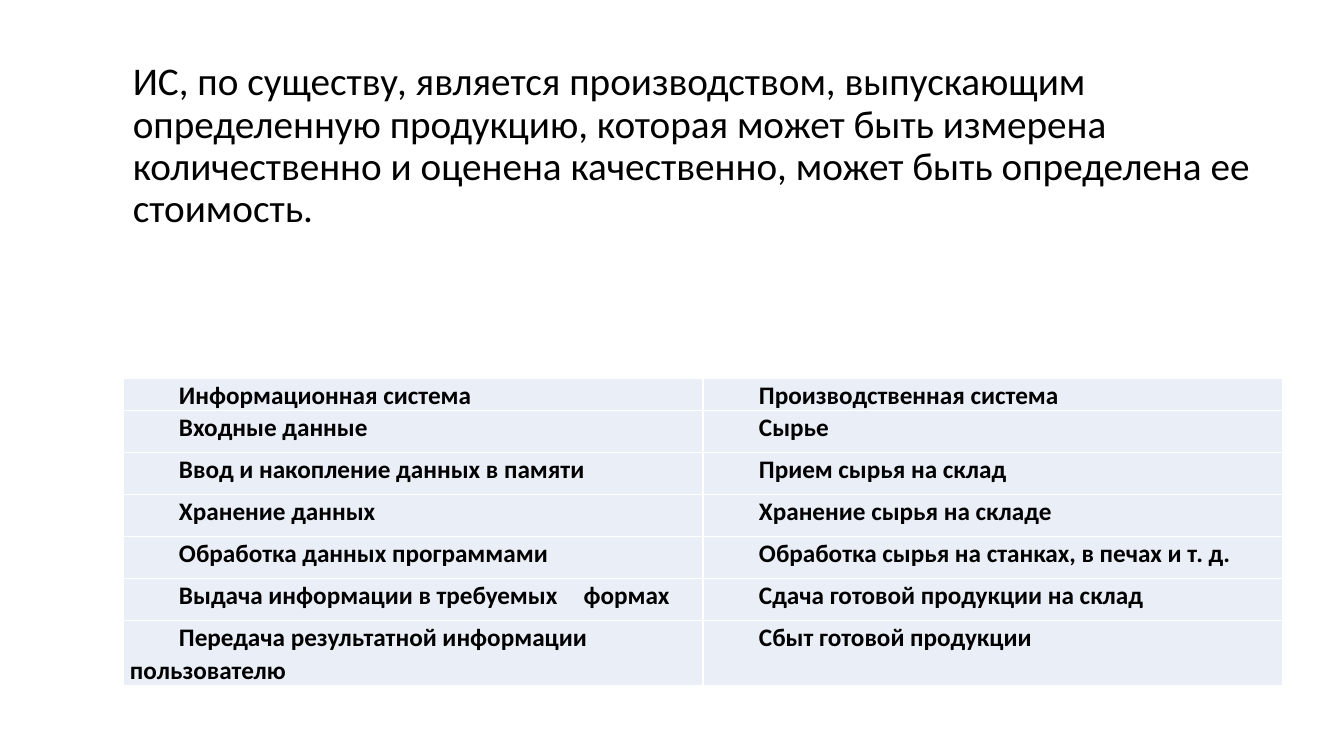
from lxml import etree
from pptx import Presentation
from pptx.dml.color import RGBColor
from pptx.oxml import parse_xml
from pptx.oxml.ns import nsdecls, qn
from pptx.util import Pt

INTRO = (
    "ИС, по существу, является производством, выпускающим определенную продукцию, "
    "которая может быть измерена количественно и оценена качественно, "
    "может быть определена ее стоимость."
)
ROWS = [
    ("Информационная система", "Производственная система"),
    ("Входные данные", "Сырье"),
    ("Ввод и накопление данных в памяти", "Прием сырья на склад"),
    ("Хранение данных", "Хранение сырья на складе"),
    ("Обработка данных программами", "Обработка сырья на станках, в печах и т. д."),
    ("Выдача информации в требуемых\tформах", "Сдача готовой продукции на склад"),
    ("Передача результатной информации пользователю", "Сбыт готовой продукции"),
]
COLORS = {"text": "000000", "cell": "EAEFF7", "border": "FFFFFF"}
FONT = "Calibri"

# Lengths in px
SLIDE_WIDTH, SLIDE_HEIGHT = 1344, 756
LEFT, COLUMN_WIDTH = 123, 580
INTRO_TOP, INTRO_HEIGHT = 57, 677
TABLE_TOP = 378
ROW_HEIGHTS = [32] + [42] * 5 + [65]
CELL_MARGIN, FIRST_LINE_INDENT, TAB_STOP = 7, 49, 457


def px(length):
    return round(length * 914400 / 100.8)


def style_font(paragraph, size, bold=False):
    font = paragraph.font
    font.name, font.size, font.bold = FONT, Pt(size), bold
    font.color.rgb = RGBColor.from_string(COLORS["text"])


def add_borders(cell):
    properties = cell._tc.get_or_add_tcPr()
    for position, side in enumerate(("lnL", "lnR", "lnT", "lnB")):
        properties.insert(position, parse_xml(
            f'<a:{side} {nsdecls("a")} w="12700"><a:solidFill>'
            f'<a:srgbClr val="{COLORS["border"]}"/></a:solidFill></a:{side}>'))


def indent_first_line(paragraph):
    """Indent the first line and set the tab stop that spaces words apart."""
    properties = paragraph._p.get_or_add_pPr()
    properties.set("marL", "0")
    properties.set("indent", str(px(FIRST_LINE_INDENT)))
    if "\t" in paragraph.text:
        tabs = etree.SubElement(properties, qn("a:tabLst"))
        etree.SubElement(tabs, qn("a:tab"), pos=str(px(TAB_STOP)), algn="l")


def fill_cell(cell, text):
    cell.margin_left = cell.margin_right = px(CELL_MARGIN)
    cell.margin_top = cell.margin_bottom = 0
    cell.fill.solid()
    cell.fill.fore_color.rgb = RGBColor.from_string(COLORS["cell"])
    add_borders(cell)
    paragraph = cell.text_frame.paragraphs[0]
    paragraph.text = text
    paragraph.line_spacing = 1.07
    indent_first_line(paragraph)
    style_font(paragraph, 18, bold=True)


def add_intro(slide):
    box = slide.shapes.add_textbox(
        px(LEFT), px(INTRO_TOP), px(2 * COLUMN_WIDTH), px(INTRO_HEIGHT))
    box.text_frame.word_wrap = True
    paragraph = box.text_frame.paragraphs[0]
    paragraph.text = INTRO
    paragraph.line_spacing = 0.9
    paragraph.space_before = Pt(10)
    style_font(paragraph, 28)


def add_comparison(slide):
    table = slide.shapes.add_table(
        len(ROWS), 2, px(LEFT), px(TABLE_TOP),
        px(2 * COLUMN_WIDTH), px(sum(ROW_HEIGHTS))).table
    table.first_row = table.horz_banding = False
    for column in table.columns:
        column.width = px(COLUMN_WIDTH)
    for row, height, texts in zip(table.rows, ROW_HEIGHTS, ROWS):
        row.height = px(height)
        for cell, text in zip(row.cells, texts):
            fill_cell(cell, text)


def main():
    presentation = Presentation()
    presentation.slide_width = px(SLIDE_WIDTH)
    presentation.slide_height = px(SLIDE_HEIGHT)
    slide = presentation.slides.add_slide(presentation.slide_layouts[6])
    add_intro(slide)
    add_comparison(slide)
    presentation.save("out.pptx")


if __name__ == "__main__":
    main()
